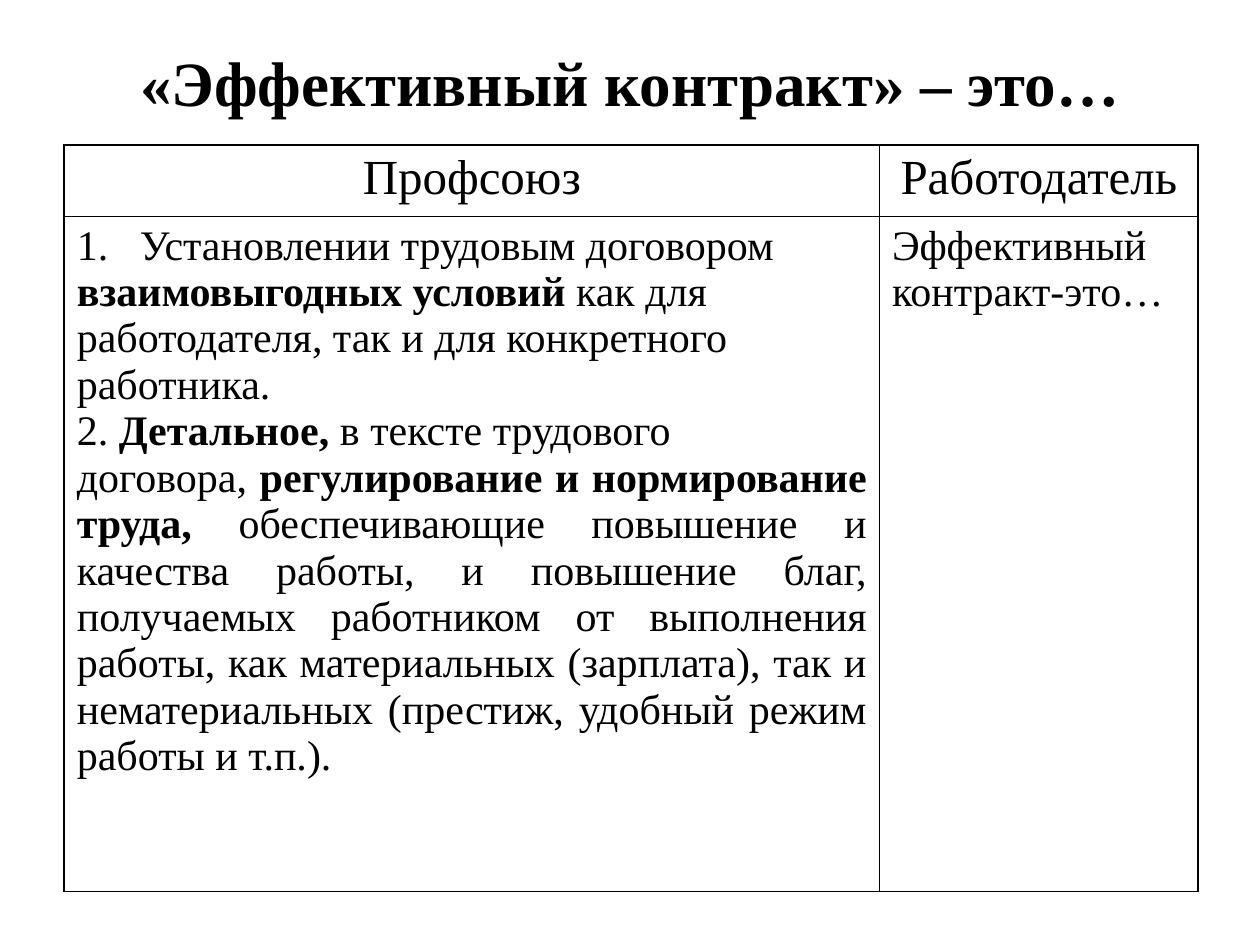
from lxml.etree import SubElement
from pptx import Presentation
from pptx.dml.color import RGBColor
from pptx.enum.text import MSO_ANCHOR, PP_ALIGN
from pptx.oxml.ns import qn
from pptx.util import Inches, Pt

COLOURS = {"text": "000000", "border": "000000"}
FONT = "Times New Roman"
TITLE = "«Эффективный контракт» – это…"
HEADERS = ["Профсоюз", "Работодатель"]
# Each paragraph: layout kind, then (text, bold) runs
UNION = [
    ("numbered", [("Установлении трудовым договором", False)]),
    ("hanging", [("взаимовыгодных условий ", True), ("как для", False)]),
    ("hanging", [("работодателя, так и для конкретного", False)]),
    ("hanging", [("работника. ", False)]),
    ("hanging", [("2. ", False), ("Детальное,", True), (" в тексте трудового", False)]),
    ("plain", [
        ("договора, ", False),
        ("регулирование и нормирование труда, ", True),
        ("обеспечивающие повышение и качества работы, и повышение благ, "
         "получаемых работником от выполнения работы, как материальных "
         "(зарплата), так и нематериальных (престиж, удобный режим работы "
         "и т.п.). ", False),
    ]),
]
EMPLOYER = [("plain", [("Эффективный контракт-это…", False)])]
COLUMN_WIDTHS = [6.47, 2.53]
ROW_HEIGHTS = [0.54, 5.36]
HANGING_INDENT = Inches(0.5)


def write_paragraphs(text_frame, paragraphs, size, alignment):
    for index, (kind, runs) in enumerate(paragraphs):
        paragraph = text_frame.add_paragraph() if index else text_frame.paragraphs[0]
        paragraph.alignment = alignment
        properties = paragraph._p.get_or_add_pPr()
        if kind != "plain":
            properties.set("marL", str(HANGING_INDENT))
            properties.set("indent", str(-HANGING_INDENT))
        if kind == "numbered":
            SubElement(properties, qn("a:buFont"), typeface="+mj-lt")
            SubElement(properties, qn("a:buAutoNum"), type="arabicPeriod")
        for text, bold in runs:
            run = paragraph.add_run()
            run.text = text
            font_format = {"name": FONT, "size": Pt(size), "bold": bold}
            for name, value in font_format.items():
                setattr(run.font, name, value)
            run.font.color.rgb = RGBColor.from_string(COLOURS["text"])


def add_borders(cell):
    properties = cell._tc.get_or_add_tcPr()
    for position, side in enumerate(("lnL", "lnR", "lnT", "lnB")):
        line = properties.makeelement(qn(f"a:{side}"), {"w": str(Pt(1))})
        fill = SubElement(line, qn("a:solidFill"))
        SubElement(fill, qn("a:srgbClr"), val=COLOURS["border"])
        properties.insert(position, line)


presentation = Presentation()
presentation.slide_width, presentation.slide_height = Inches(10), Inches(7.5)
slide = presentation.slides.add_slide(presentation.slide_layouts[6])

# Title
title = slide.shapes.add_textbox(Inches(0.5), Inches(0.3), Inches(9), Inches(0.69))
title.text_frame.word_wrap = True
title.text_frame.vertical_anchor = MSO_ANCHOR.MIDDLE
write_paragraphs(title.text_frame, [("plain", [(TITLE, True)])], 36, PP_ALIGN.CENTER)

# Table
frame = slide.shapes.add_table(
    len(ROW_HEIGHTS), len(COLUMN_WIDTHS), Inches(0.51), Inches(1.15),
    Inches(sum(COLUMN_WIDTHS)), Inches(sum(ROW_HEIGHTS)))
table = frame.table
table.first_row = table.horz_banding = False
for column, width in zip(table.columns, COLUMN_WIDTHS):
    column.width = Inches(width)
for row, height in zip(table.rows, ROW_HEIGHTS):
    row.height = Inches(height)

# Cell contents
for column, header in enumerate(HEADERS):
    write_paragraphs(table.cell(0, column).text_frame,
                     [("plain", [(header, False)])], 28, PP_ALIGN.CENTER)
bodies = [(UNION, PP_ALIGN.JUSTIFY), (EMPLOYER, PP_ALIGN.LEFT)]
for column, (paragraphs, alignment) in enumerate(bodies):
    write_paragraphs(table.cell(1, column).text_frame, paragraphs, 24, alignment)
for cell in table.iter_cells():
    cell.fill.background()
    add_borders(cell)

presentation.save("out.pptx")
